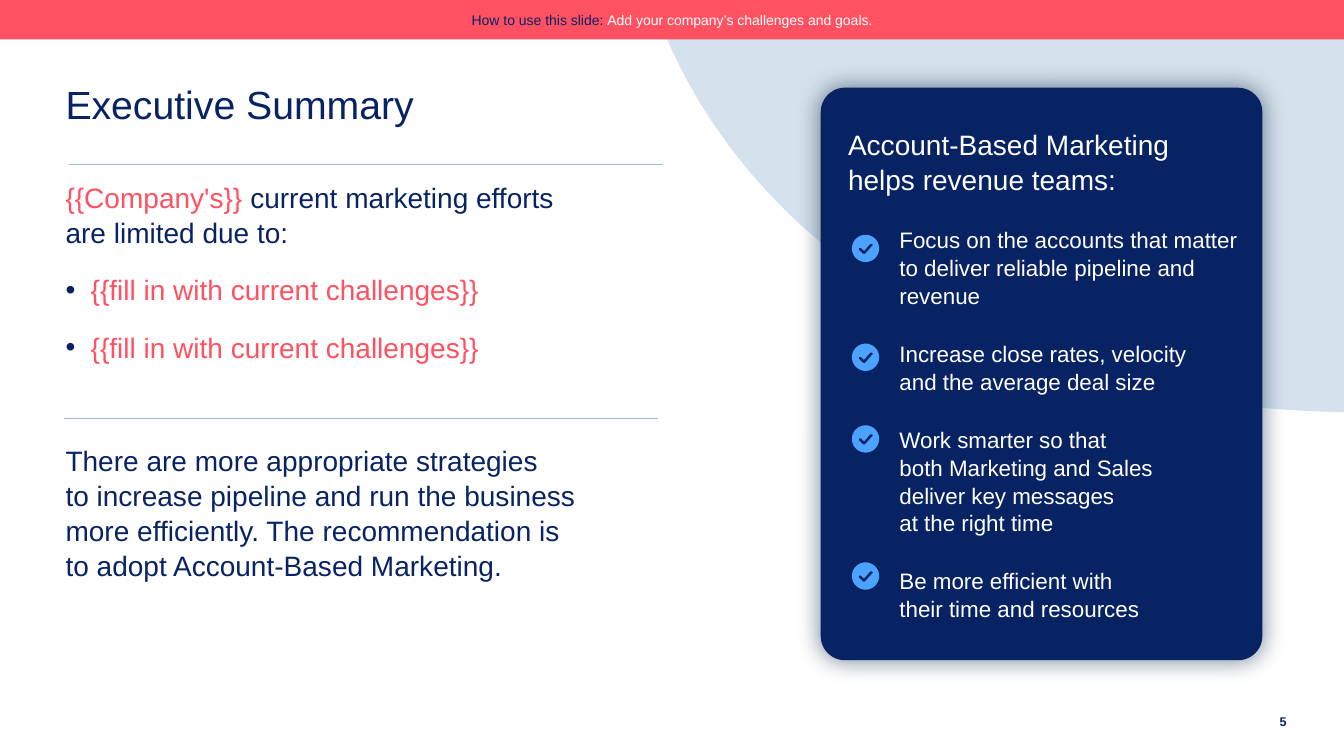
import math

from lxml import etree
from pptx import Presentation
from pptx import util as u
from pptx.dml.color import RGBColor
from pptx.enum import shapes, text
from pptx.oxml import parse_xml
from pptx.oxml.ns import nsdecls, qn

COLORS = {
    "navy": "082364",
    "coral": "FF5161",
    "white": "FFFFFF",
    "mist": "D5E1EC",
    "rule": "A0BBD6",
    "sky": "4CA3FF",
    "shadow": "253E57",
}
LEFT, CENTER, RIGHT = text.PP_ALIGN.LEFT, text.PP_ALIGN.CENTER, text.PP_ALIGN.RIGHT
TOP, MIDDLE, BOTTOM = text.MSO_ANCHOR.TOP, text.MSO_ANCHOR.MIDDLE, text.MSO_ANCHOR.BOTTOM
CHECK = [(8.57, 2.49), (8.54, 2.46), (8.52, 2.46), (8.52, 2.48), (8.56, 2.52),
         (8.58, 2.52), (8.65, 2.44), (8.66, 2.43), (8.65, 2.42), (8.63, 2.42)]
CHECK_CENTER = (8.585, 2.465)


def color(name):
    return RGBColor.from_string(COLORS[name])


def write(para, spans, size=20, bold=None, align=LEFT, spacing=None, before=0,
          margin=0, indent=0, bullet=None):
    """Fill a paragraph with (text, colour) spans; a newline is a line break."""
    para.alignment = align
    para.space_before = u.Pt(before)
    if spacing:
        para.line_spacing = spacing
    props = para._p.get_or_add_pPr()
    props.set("marL", str(u.Inches(margin)))
    props.set("indent", str(u.Inches(indent)))
    if bullet:
        fill = etree.SubElement(props, qn("a:buClr"))
        etree.SubElement(fill, qn("a:srgbClr")).set("val", COLORS["navy"])
        etree.SubElement(props, qn("a:buChar")).set("char", bullet)
    else:
        etree.SubElement(props, qn("a:buNone"))
    for words, tint in spans:
        for number, line in enumerate(words.split("\n")):
            if number:
                para.add_line_break()
            span = para.add_run()
            span.text = line
            span.font.name = "Arial"
            span.font.size = u.Pt(size)
            span.font.bold = bold
            span.font.color.rgb = color(tint)


class SlideBuilder:
    def __init__(self, deck):
        self.page = deck.slides.add_slide(deck.slide_layouts[1])

    def frame(self, box, paragraphs, anchor=TOP, insets=(0.1, 0.05, 0.1, 0.05)):
        """Set up the text frame and write one (spans, format) pair per paragraph."""
        frame = box.text_frame
        frame.word_wrap = True
        frame.auto_size = text.MSO_AUTO_SIZE.NONE
        frame.vertical_anchor = anchor
        (frame.margin_left, frame.margin_top,
         frame.margin_right, frame.margin_bottom) = map(u.Inches, insets)
        for number, (spans, style) in enumerate(paragraphs):
            para = frame.add_paragraph() if number else frame.paragraphs[0]
            write(para, spans, **style)

    def placeholder(self, index, area, paragraphs, **style):
        box = self.page.placeholders[index]
        box.left, box.top, box.width, box.height = map(u.Inches, area)
        self.frame(box, paragraphs, **style)

    def label(self, area, paragraphs, **style):
        box = self.page.shapes.add_textbox(*map(u.Inches, area))
        self.frame(box, paragraphs, **style)

    def paint(self, box, fill):
        box.shadow.inherit = False
        box.fill.solid()
        box.fill.fore_color.rgb = color(fill)
        box.line.fill.background()

    def shape(self, kind, area, fill, paragraphs, **style):
        box = self.page.shapes.add_shape(kind, *map(u.Inches, area))
        self.paint(box, fill)
        self.frame(box, paragraphs, anchor=MIDDLE, **style)
        return box

    def outline(self, contours, fill):
        """Draw closed contours, given in inches, as one filled shape."""
        builder = None
        for contour in contours:
            points = [(u.Inches(x), u.Inches(y)) for x, y in contour]
            if builder is None:
                builder = self.page.shapes.build_freeform(*points[0])
            else:
                builder.move_to(*points[0])
            builder.add_line_segments(points[1:], close=True)
        self.paint(builder.convert_to_shape(), fill)

    def check_mark(self, top):
        """Draw a disc with a tick cut out of it."""
        radius, steps = 0.135, 48
        x, y = CHECK_CENTER[0], top + radius
        disc = [(x + radius * math.cos(math.tau * step / steps),
                 y + radius * math.sin(math.tau * step / steps)) for step in range(steps)]
        tick = [(px, py - CHECK_CENTER[1] + y) for px, py in CHECK]
        self.outline([disc, tick], "sky")

    def rule(self, left, top, width):
        line = self.page.shapes.add_connector(
            shapes.MSO_CONNECTOR.STRAIGHT, u.Inches(left), u.Inches(top),
            u.Inches(left + width), u.Inches(top))
        line.line.color.rgb = color("rule")
        line.line.width = u.Pt(0.75)
        etree.SubElement(line._element.spPr, qn("a:effectLst"))


def glow(box, blur, alpha):
    """Give the shape a soft shadow on all sides."""
    effects = box._element.spPr.find(qn("a:effectLst"))
    effects.append(parse_xml(
        f'<a:outerShdw {nsdecls("a")} blurRad="{u.Pt(blur)}" dist="0" dir="0" '
        f'algn="ctr" rotWithShape="0"><a:srgbClr val="{COLORS["shadow"]}">'
        f'<a:alpha val="{alpha * 1000}"/></a:srgbClr></a:outerShdw>'))


def bezier(start, first, second, end, steps=60):
    points = []
    for step in range(steps + 1):
        t = step / steps
        weights = ((1 - t) ** 3, 3 * t * (1 - t) ** 2, 3 * t * t * (1 - t), t ** 3)
        points.append(tuple(sum(w * p[axis] for w, p in zip(weights, (start, first, second, end)))
                            for axis in (0, 1)))
    return points


def main():
    deck = Presentation()
    deck.slide_width, deck.slide_height = u.Inches(13.33), u.Inches(7.5)
    slide = SlideBuilder(deck)
    even = (0.1, 0.1, 0.1, 0.1)
    leading = 1.04

    slide.placeholder(0, (0.55, 0.12, 11.8, 1.25), [
        ([("Executive Summary", "navy")], dict(size=28, spacing=0.9)),
    ], anchor=BOTTOM, insets=even)

    challenge = ([("{{fill in with current challenges}}", "coral")],
                 dict(before=16, spacing=leading, margin=0.25, indent=-0.25, bullet="•"))
    slide.placeholder(1, (0.55, 1.73, 6.12, 5.03), [
        ([("{{Company's}} ", "coral"),
          ("current marketing efforts\nare limited due to:", "navy")], dict(spacing=leading)),
        challenge,
        challenge,
        ([("There are more appropriate strategies\nto increase pipeline and run the business\n"
           "more efficiently. The recommendation is\nto adopt Account-Based Marketing.", "navy")],
         dict(before=56, spacing=leading)),
    ])

    corner = (13.33, 0)
    slide.outline([bezier((6.48, 0), (6.48, 0), (7.46, 3.97), (13.33, 4.09)) + [corner]], "mist")

    benefits = [
        (2.33, "Focus on the accounts that matter to deliver reliable pipeline and revenue"),
        (3.41, "Increase close rates, velocity\nand the average deal size"),
        (4.22, "Work smarter so that\nboth Marketing and Sales\n"
               "deliver key messages\nat the right time"),
        (5.58, "Be more efficient with\ntheir time and resources"),
    ]
    heading = ([("Account-Based Marketing\nhelps revenue teams:", "white")], dict(spacing=leading))
    panel = slide.shape(
        shapes.MSO_SHAPE.ROUNDED_RECTANGLE, (8.14, 0.87, 4.38, 5.68), "navy",
        [heading] + [([(words, "white")], dict(size=16, before=21.3, spacing=leading, margin=0.51))
                     for _, words in benefits],
        insets=(0.2, 0.05, 0.1, 0.05))
    panel.adjustments[0] = 0.055
    glow(panel, blur=17, alpha=63)

    slide.rule(0.63, 4.15, 5.9)
    for top, _ in benefits:
        slide.check_mark(top)
    slide.rule(0.68, 1.63, 5.9)

    slide.shape(shapes.MSO_SHAPE.RECTANGLE, (0, 0, 13.33, 0.39), "coral", [
        ([("How to use this slide: ", "navy"),
          ("Add your company’s challenges and goals.", "white")], dict(size=10, align=CENTER)),
    ], insets=even)
    slide.label((12.28, 6.86, 0.58, 0.57), [
        ([("5", "navy")], dict(size=9, bold=True, align=RIGHT, spacing=1.15)),
    ], anchor=MIDDLE)

    deck.save("out.pptx")


if __name__ == "__main__":
    main()
